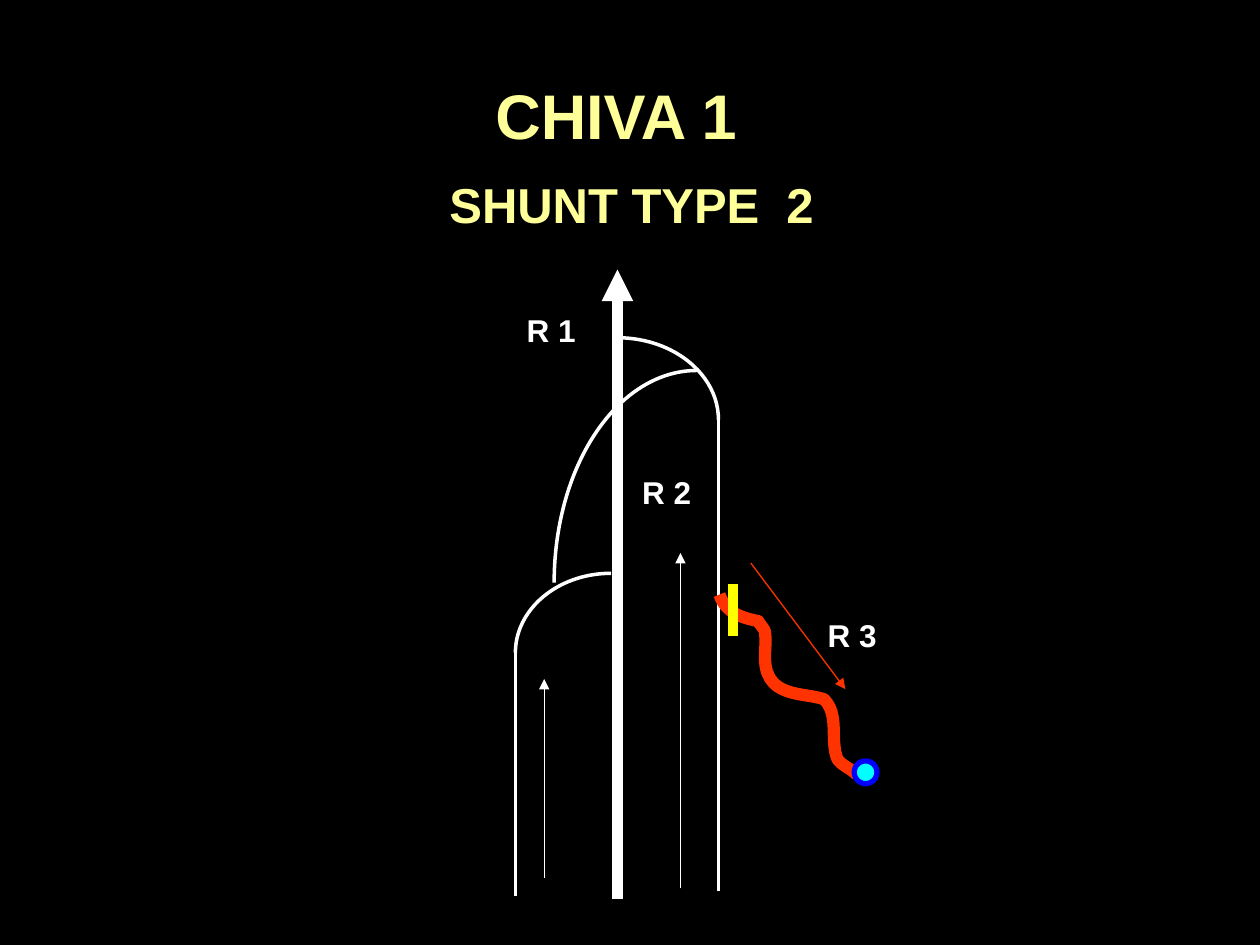
from pptx import Presentation
from pptx.dml.color import RGBColor
from pptx.enum.shapes import MSO_CONNECTOR, MSO_SHAPE
from pptx.enum.text import MSO_ANCHOR, PP_ALIGN
from pptx.oxml.ns import qn
from pptx.util import Pt
from lxml import etree


def rgb(color):
    return RGBColor.from_string(color)


def add_text(text, x, y, w, h, size=18, color="FFFFFF", align=PP_ALIGN.LEFT, wrap=False, fill=None):
    sp = s.shapes.add_textbox(Pt(x), Pt(y), Pt(w), Pt(h))
    if fill:
        sp.fill.solid()
        sp.fill.fore_color.rgb = rgb(fill)
    tf = sp.text_frame
    tf.word_wrap = wrap
    tf.vertical_anchor = MSO_ANCHOR.TOP
    tf.margin_left = tf.margin_right = tf.margin_top = tf.margin_bottom = 0
    p = tf.paragraphs[0]
    p.alignment = align
    r = p.add_run()
    r.text = text
    r.font.name, r.font.size, r.font.bold = "Arial", Pt(size), True
    r.font.color.rgb = rgb(color)


prs = Presentation()
prs.slide_width, prs.slide_height = Pt(720), Pt(540)
s = prs.slides.add_slide(prs.slide_layouts[6])
s.background.fill.solid()
s.background.fill.fore_color.rgb = rgb("000000")

# Title and subtitle
for text, y, h, size in [("CHIVA 1 ", 43.5, 42, 36), (" SHUNT TYPE  2", 99.8, 33, 28)]:
    add_text(text, 114, y, 486, h, size=size, color="FFFF99", align=PP_ALIGN.CENTER, wrap=True)

# Vein arches: quarter ellipses given by centre, radii and angles (1/60000 degree / 100000)
LEFT, RIGHT = (108, 162), (162, 0)
for cx, cy, rx, ry, angles in [
    (349.2, 373, 54.7, 45.4, LEFT),
    (352.8, 239.8, 57.8, 46.8, RIGHT),
    (398.2, 332.9, 81.5, 121.2, LEFT),
]:
    sp = s.shapes.add_shape(MSO_SHAPE.ARC, Pt(cx - rx), Pt(cy - ry), Pt(2 * rx), Pt(2 * ry))
    sp.adjustments[0], sp.adjustments[1] = angles
    sp.shadow.inherit = False
    sp.fill.background()
    sp.line.color.rgb = rgb("FFFFFF")
    sp.line.width = Pt(2)

# Vessels and flow arrows
for x1, y1, x2, y2, color, width, arrow in [
    (294.5, 371.5, 294.5, 511.9, "FFFFFF", 2, False),
    (352.8, 514, 352.8, 154, "FFFFFF", 6, True),
    (388.8, 507.6, 388.8, 316, "FFFFFF", 0.75, True),
    (311, 501.8, 311, 388, "FFFFFF", 0.75, True),
    (410.5, 237, 410.5, 509, "FFFFFF", 2, False),
    (429.1, 321.8, 483.1, 393.8, "FF3300", 0.75, True),
]:
    c = s.shapes.add_connector(MSO_CONNECTOR.STRAIGHT, Pt(x1), Pt(y1), Pt(x2), Pt(y2))
    c.line.color.rgb = rgb(color)
    c.line.width = Pt(width)
    if arrow:
        etree.SubElement(c.line._get_or_add_ln(), qn("a:tailEnd"), type="triangle")
    etree.SubElement(c._element.spPr, qn("a:effectLst"))

# Network labels
for text, x, y, fill in [("R 1", 301, 178, None), ("R 2", 367, 270, None), ("R 3", 473, 352, "000000")]:
    add_text(text, x, y, 28.8, 22.3, fill=fill)

# Tortuous tributary: cubic curves sampled as short segments
start = (411.1, 339.8)
curves = [
    ((414.7, 349.9), (422.6, 352.8), (433.4, 355)),
    ((434.2, 357.1), (436.3, 358.6), (437, 360.7)),
    ((438.5, 367.9), (435.6, 376.6), (438.5, 384.5)),
    ((443.5, 398.2), (460.1, 396), (470.9, 399.6)),
    ((479.5, 408.2), (474.5, 421.9), (478.1, 432.7)),
    ((479.5, 437), (486.7, 439.2), (489.6, 442.8)),
]
STEPS = 12
points, p0 = [], start
for p1, p2, p3 in curves:
    for i in range(1, STEPS + 1):
        t = i / STEPS
        u = 1 - t
        points.append([
            Pt(u**3 * a + 3 * u * u * t * b + 3 * u * t * t * c + t**3 * d)
            for a, b, c, d in zip(p0, p1, p2, p3)
        ])
    p0 = p3
fb = s.shapes.build_freeform(Pt(start[0]), Pt(start[1]))
fb.add_line_segments(points, close=False)
sp = fb.convert_to_shape()
sp.shadow.inherit = False
sp.fill.background()
sp.line.color.rgb = rgb("FF3300")
sp.line.width = Pt(7)

# Re-entry point
sp = s.shapes.add_shape(MSO_SHAPE.OVAL, Pt(488.1), Pt(434.8), Pt(13), Pt(13))
sp.shadow.inherit = False
sp.fill.solid()
sp.fill.fore_color.rgb = rgb("00FFFF")
sp.line.color.rgb = rgb("0000FF")
sp.line.width = Pt(3)

# Ligation mark
c = s.shapes.add_connector(MSO_CONNECTOR.STRAIGHT, Pt(419), Pt(334), Pt(419), Pt(363.6))
c.line.color.rgb = rgb("FFFF00")
c.line.width = Pt(6)
etree.SubElement(c._element.spPr, qn("a:effectLst"))

prs.save("out.pptx")
